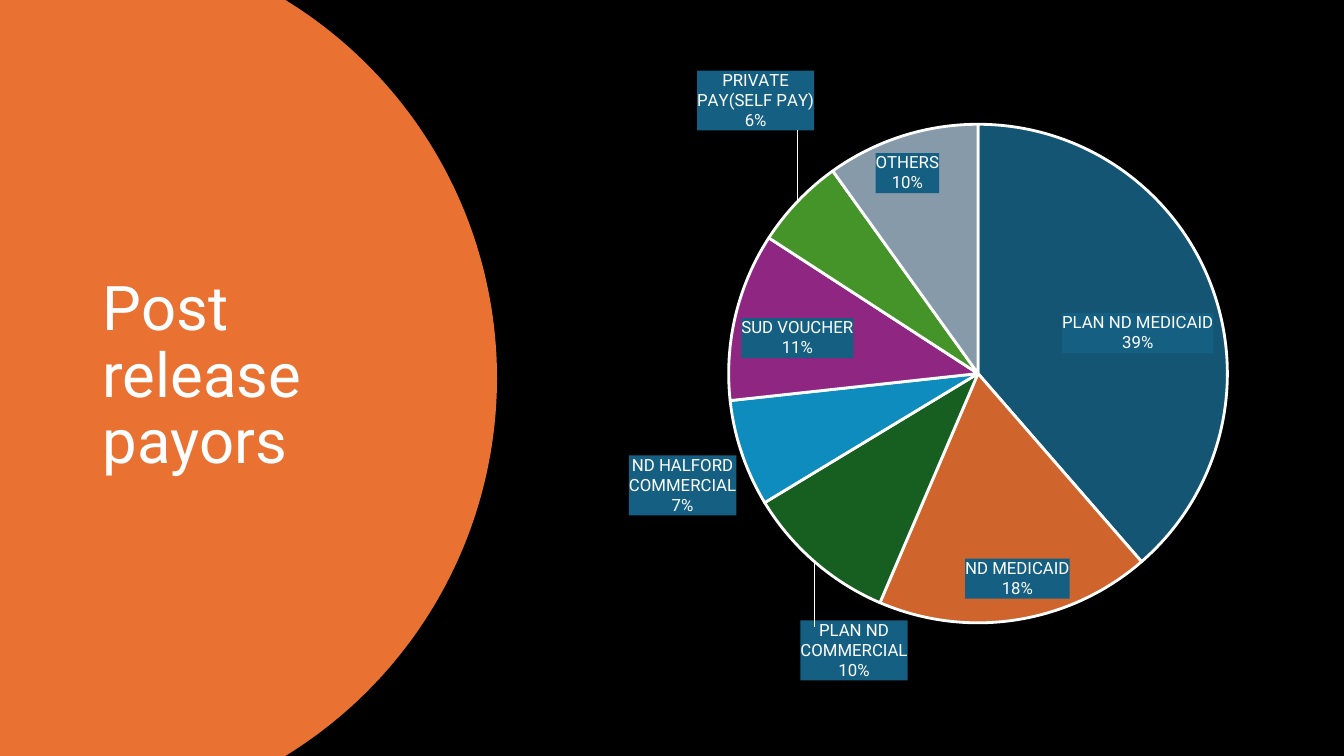
import math
from dataclasses import dataclass

import lxml.etree
import pptx
import pptx.chart.data
import pptx.dml.color
import pptx.enum.chart
import pptx.enum.shapes
import pptx.enum.text
import pptx.oxml
import pptx.oxml.ns
import pptx.util
from pptx.util import Inches


@dataclass(frozen=True)
class Theme:
    """Colours, font and type sizes of the slide."""
    font: str = "Roboto"
    title_size: int = 44
    label_size: int = 12
    background: str = "000000"
    panel: str = "E97132"
    text: str = "FFFFFF"
    label_fill: str = "156082"


THEME = Theme()
PAYORS = [
    ("PLAN ND MEDICAID", 39, "135573"),
    ("ND MEDICAID", 18, "CF642C"),
    ("PLAN ND COMMERCIAL", 10, "165F20"),
    ("ND HALFORD COMMERCIAL", 7, "0D8CBD"),
    ("SUD VOUCHER", 11, "8E2682"),
    ("PRIVATE PAY(SELF PAY)", 6, "459429"),
    ("OTHERS", 10, "879AAA"),
]
MOVED_LABELS = {2: (0.14, 0.1), 5: (0.03, -0.11)}
CHART_NS = 'xmlns:c="http://schemas.openxmlformats.org/drawingml/2006/chart"'


def color(value):
    """Turn a hex string into a colour."""
    return pptx.dml.color.RGBColor.from_string(value)


def style_font(font, size):
    """Apply the theme font in the text colour."""
    font.name = THEME.font
    font.size = pptx.util.Pt(size)
    font.color.rgb = color(THEME.text)


def add_panel(page, edge, reach, height):
    """Draw a panel whose right side is an arc from edge out to reach."""
    bulge = reach - edge
    radius = (bulge ** 2 + (height / 2) ** 2) / (2 * bulge)
    sweep = math.asin(height / 2 / radius)
    steps = 120
    angles = [sweep * (2 * step / steps - 1) for step in range(steps + 1)]
    arc = [(Inches(reach - radius + radius * math.cos(angle)),
            Inches(height / 2 + radius * math.sin(angle))) for angle in angles]
    builder = page.shapes.build_freeform(0, 0)
    builder.add_line_segments(arc + [(0, Inches(height))], close=True)
    panel = builder.convert_to_shape()
    panel.shadow.inherit = False
    panel.fill.solid()
    panel.fill.fore_color.rgb = color(THEME.panel)
    panel.line.fill.background()


def add_title(page, left, top, width, height, text):
    """Place the slide title, centred vertically in its box."""
    box = page.shapes.add_textbox(Inches(left), Inches(top), Inches(width), Inches(height))
    frame = box.text_frame
    frame.word_wrap = True
    frame.vertical_anchor = pptx.enum.text.MSO_ANCHOR.MIDDLE
    frame.text = text
    para = frame.paragraphs[0]
    para.line_spacing = 0.9
    style_font(para.runs[0].font, THEME.title_size)


def manual_layout(x, y, extra=""):
    """Build a chart layout element at the given fractions."""
    return pptx.oxml.parse_xml(
        f'<c:layout {CHART_NS}><c:manualLayout>{extra}'
        f'<c:x val="{x:.3f}"/><c:y val="{y:.3f}"/></c:manualLayout></c:layout>')


def label_box():
    """Build the filled background of a data label."""
    return pptx.oxml.parse_xml(
        f'<c:spPr {CHART_NS} {pptx.oxml.ns.nsdecls("a")}><a:solidFill>'
        f'<a:srgbClr val="{THEME.label_fill}"/></a:solidFill><a:ln><a:noFill/></a:ln></c:spPr>')


def style_labels(series):
    """Show category and percentage on filled labels with leader lines."""
    labels = series.data_labels
    labels.show_category_name = True
    labels.show_percentage = True
    labels.show_value = False
    labels.number_format = "0%"
    labels.number_format_is_linked = False
    labels.position = pptx.enum.chart.XL_LABEL_POSITION.BEST_FIT
    style_font(labels.font, THEME.label_size)
    node = labels._element
    qn = pptx.oxml.ns.qn
    node.find(qn("c:txPr")).addprevious(label_box())
    for old in node.findall(qn("c:showLeaderLines")):
        node.remove(old)
    for tag in ("showLeaderLines", "leaderLines"):
        lxml.etree.SubElement(node, qn(f"c:{tag}"))
    node.find(qn("c:showLeaderLines")).set("val", "1")
    node.find(qn("c:leaderLines")).append(pptx.oxml.parse_xml(
        f'<c:spPr {CHART_NS} {pptx.oxml.ns.nsdecls("a")}><a:ln w="9525"><a:solidFill>'
        f'<a:srgbClr val="{THEME.text}"/></a:solidFill></a:ln></c:spPr>'))
    for index, offset in MOVED_LABELS.items():
        label = series.points[index].data_label
        label.position = pptx.enum.chart.XL_LABEL_POSITION.OUTSIDE_END
        style_font(label.font, THEME.label_size)
        item = next(entry for entry in node.findall(qn("c:dLbl"))
                    if entry.find(qn("c:idx")).get("val") == str(index))
        item.find(qn("c:idx")).addnext(manual_layout(*offset))
        for old in item.findall(qn("c:spPr")):
            item.remove(old)
        item.find(qn("c:txPr")).addprevious(label_box())
        for tag, value in (("showVal", "0"), ("showCatName", "1"), ("showPercent", "1")):
            item.find(qn(f"c:{tag}")).set("val", value)


def add_payor_pie(page, left, top, width, height):
    """Draw the payor pie inside its box, shifted to the right for labels."""
    data = pptx.chart.data.CategoryChartData()
    data.categories = [name for name, _, _ in PAYORS]
    data.add_series("Series 1", [share for _, share, _ in PAYORS])
    chart = page.shapes.add_chart(
        pptx.enum.chart.XL_CHART_TYPE.PIE, Inches(left), Inches(top),
        Inches(width), Inches(height), data).chart
    chart.has_legend = False
    chart.has_title = False
    style_font(chart.font, 10)
    plot = chart.plots[0]
    plot.vary_by_categories = True
    series = plot.series[0]
    for index, (_, _, fill) in enumerate(PAYORS):
        style = series.points[index].format
        style.fill.solid()
        style.fill.fore_color.rgb = color(fill)
        style.line.color.rgb = color(THEME.text)
        style.line.width = pptx.util.Pt(2)
    style_labels(series)
    diameter = 4.95
    layout = manual_layout(1.53 / width, 0.53 / height, '<c:layoutTarget val="inner"/>'
                           '<c:xMode val="edge"/><c:yMode val="edge"/>')
    for tag, size in (("w", width), ("h", height)):
        extent = lxml.etree.SubElement(layout[0], pptx.oxml.ns.qn(f"c:{tag}"))
        extent.set("val", f"{diameter / size:.3f}")
    area = chart._chartSpace.chart.plotArea
    for old in area.findall(pptx.oxml.ns.qn("c:layout")):
        area.remove(old)
    area.insert(0, layout)


def main():
    """Build the slide and save the deck."""
    deck = pptx.Presentation()
    deck.slide_width, deck.slide_height = Inches(13.33), Inches(7.5)
    page = deck.slides.add_slide(deck.slide_layouts[6])
    page.background.fill.solid()
    page.background.fill.fore_color.rgb = color(THEME.background)
    add_panel(page, 2.83, 4.93, 7.5)
    add_title(page, 0.92, 0.7, 3.23, 6.09, "Post release payors")
    add_payor_pie(page, 5.7, 0.7, 6.88, 6.05)
    deck.save("out.pptx")


if __name__ == "__main__":
    main()
